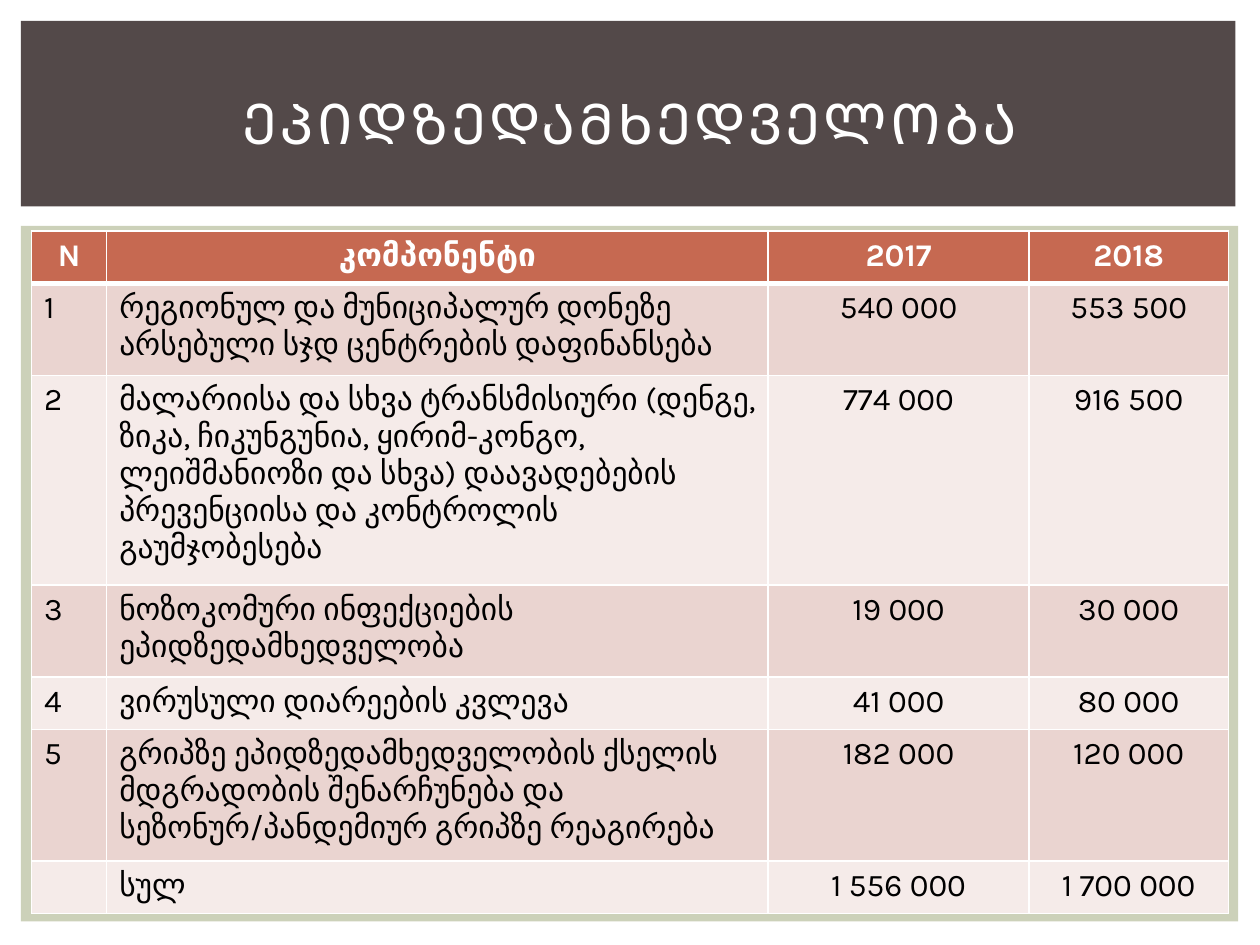
from pptx import Presentation
from pptx.dml.color import RGBColor
from pptx.enum.shapes import MSO_SHAPE
from pptx.enum.text import MSO_ANCHOR, PP_ALIGN
from pptx.oxml import parse_xml
from pptx.oxml.ns import nsdecls
from pptx.util import Pt

FONT = "Karla"
WHITE = "FFFFFF"
COLS = [43, 378, 149, 114]
ROW_HEIGHTS = [30, 52.5, 119.5, 52.5, 30, 75, 30]
ROWS = [
    ("N", "კომპონენტი", "2017", "2018"),
    ("1", "რეგიონულ და მუნიციპალურ დონეზე არსებული სჯდ ცენტრების დაფინანსება",
     "540 000", "553 500"),
    ("2", "მალარიისა და სხვა ტრანსმისიური (დენგე, ზიკა, ჩიკუნგუნია, ყირიმ-კონგო, "
     "ლეიშმანიოზი და სხვა) დაავადებების პრევენციისა და კონტროლის გაუმჯობესება",
     "774 000", "916 500"),
    ("3", "ნოზოკომური ინფექციების ეპიდზედამხედველობა", "19 000", "30 000"),
    ("4", "ვირუსული დიარეების კვლევა", "41 000", "80 000"),
    ("5", "გრიპზე ეპიდზედამხედველობის ქსელის მდგრადობის შენარჩუნება და "
     "სეზონურ/პანდემიურ გრიპზე რეაგირება", "182 000", "120 000"),
    ("", "სულ", "1 556 000", "1 700 000"),
]


def rgb(color):
    return RGBColor.from_string(color)


def style(p, size, color, bold=False, align=None):
    p.alignment = align
    p.font.name = FONT
    p.font.size = Pt(size)
    p.font.bold = bold
    p.font.color.rgb = rgb(color)


def add_panel(s, x, y, w, h, color):
    sp = s.shapes.add_shape(MSO_SHAPE.RECTANGLE, Pt(x), Pt(y), Pt(w), Pt(h))
    sp.shadow.inherit = False
    sp.fill.solid()
    sp.fill.fore_color.rgb = rgb(color)
    sp.line.fill.background()


def set_borders(cell, bottom):
    tcPr = cell._tc.get_or_add_tcPr()
    widths = {"lnL": 1, "lnR": 1, "lnT": 1, "lnB": bottom}
    for i, (side, width) in enumerate(widths.items()):
        # Border lines come before the fill
        tcPr.insert(i, parse_xml(
            f'<a:{side} {nsdecls("a")} w="{Pt(width)}"><a:solidFill>'
            f'<a:srgbClr val="{WHITE}"/></a:solidFill></a:{side}>'))


def place_title(s, x, y, w, h):
    title = s.shapes.title
    title.left, title.top, title.width, title.height = Pt(x), Pt(y), Pt(w), Pt(h)
    tf = title.text_frame
    tf.word_wrap = True
    tf.vertical_anchor = MSO_ANCHOR.MIDDLE
    p = tf.paragraphs[0]
    style(p, 32, WHITE, align=PP_ALIGN.CENTER)
    r = p.add_run()
    r.text = "ᲔᲞᲘᲓᲖᲔᲓᲐᲛᲮᲔᲓᲕᲔᲚᲝᲑᲐ"
    r._r.get_or_add_rPr().set("spc", "200")
    # Bring the title in front of the band
    s.shapes._spTree.append(title._element)


def add_budget_table(s, x, y, w, h):
    table = s.shapes.add_table(len(ROWS), len(COLS), Pt(x), Pt(y), Pt(w), Pt(h)).table
    table.horz_banding = False
    for col, width in zip(table.columns, COLS):
        col.width = Pt(w * width / sum(COLS))
    for i, values in enumerate(ROWS):
        table.rows[i].height = Pt(h * ROW_HEIGHTS[i] / sum(ROW_HEIGHTS))
        header = i == 0
        fill = "C66951" if header else ("F5EBE9", "EAD4D0")[i % 2]
        for j, value in enumerate(values):
            cell = table.cell(i, j)
            cell.fill.solid()
            cell.fill.fore_color.rgb = rgb(fill)
            set_borders(cell, 3 if header else 1)
            p = cell.text_frame.paragraphs[0]
            if value:
                p.add_run().text = value
            centred = header or j > 1
            style(p, 18, WHITE if header else "000000", header,
                  PP_ALIGN.CENTER if centred else PP_ALIGN.LEFT)


def main():
    prs = Presentation()
    prs.slide_width, prs.slide_height = Pt(720), Pt(540)
    s = prs.slides.add_slide(prs.slide_layouts[5])
    # Background panels
    add_panel(s, 12, 129, 695.5, 397.5, "CCD1B9")
    add_panel(s, 12, 12, 694, 106, "534949")
    # Content
    add_budget_table(s, 18, 132, 684, 390)
    place_title(s, 30, 28, 660, 83)
    prs.save("out.pptx")


if __name__ == "__main__":
    main()
